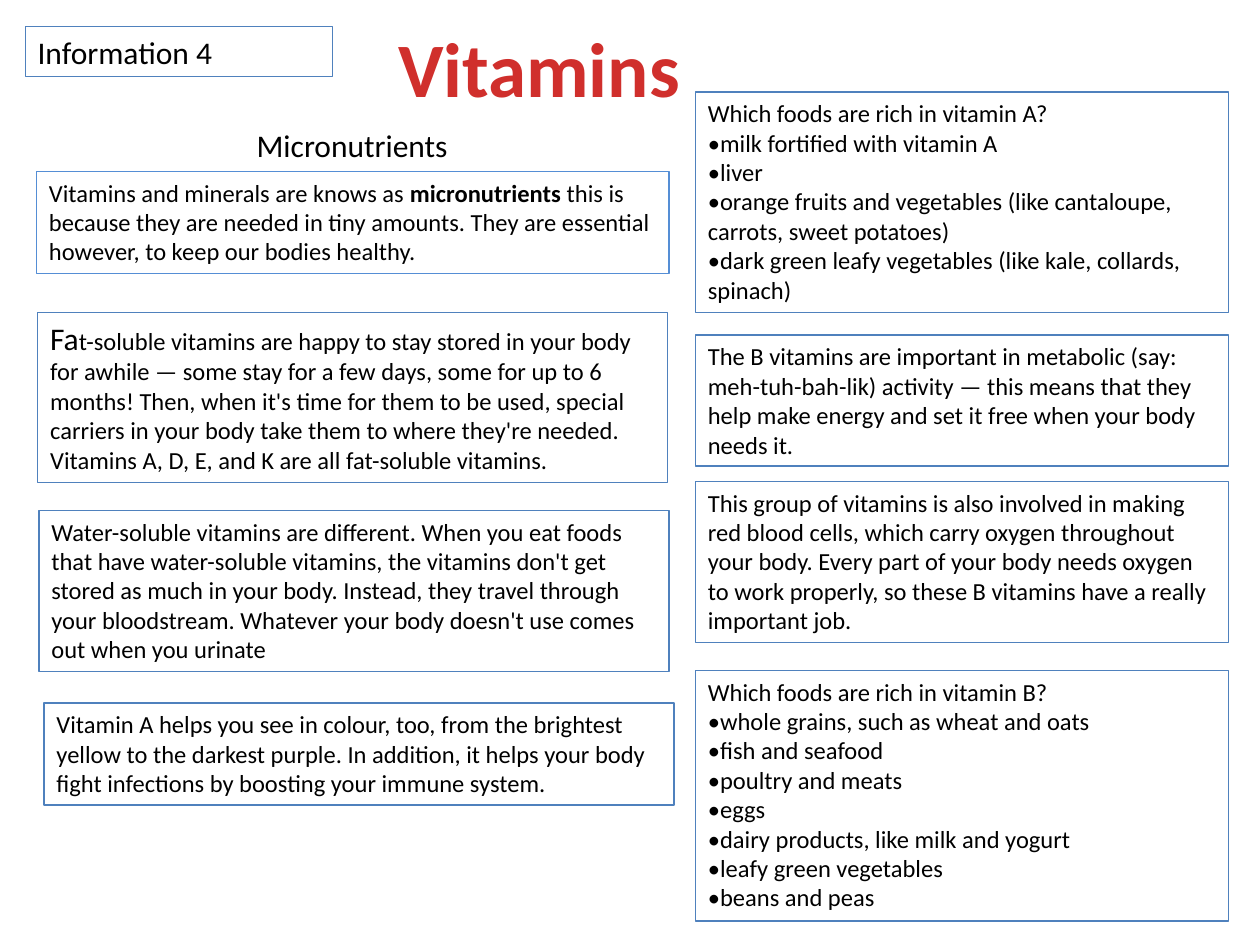
from dataclasses import dataclass

from pptx import Presentation
from pptx.dml.color import RGBColor
from pptx.enum.shapes import MSO_SHAPE
from pptx.enum.text import MSO_ANCHOR, MSO_AUTO_SIZE, PP_ALIGN
from pptx.util import Inches, Pt


@dataclass(frozen=True)
class Theme:
    font: str = "Calibri"
    text: RGBColor = RGBColor(0x00, 0x00, 0x00)
    title: RGBColor = RGBColor(0xD0, 0x2F, 0x2C)
    border: RGBColor = RGBColor(0x4F, 0x81, 0xBD)
    light_border: RGBColor = RGBColor(0x55, 0x8E, 0xD5)
    title_size: int = 44
    heading_size: int = 18
    body_size: int = 14
    border_width: float = 0.75


theme = Theme()


def write_text(box, paragraphs, size=theme.body_size, color=theme.text,
               bold=False, align=PP_ALIGN.LEFT, wrap=True):
    """Fill a box; a paragraph is a string or a list of (text, overrides)."""
    frame = box.text_frame
    frame.word_wrap = wrap
    frame.auto_size = MSO_AUTO_SIZE.SHAPE_TO_FIT_TEXT
    frame.vertical_anchor = MSO_ANCHOR.TOP
    for index, content in enumerate(paragraphs):
        para = frame.add_paragraph() if index else frame.paragraphs[0]
        para.alignment = align
        spans = [(content, {})] if isinstance(content, str) else content
        for text, overrides in spans:
            span = para.add_run()
            span.text = text
            span.font.name = theme.font
            span.font.size = Pt(overrides.get("size", size))
            span.font.bold = overrides.get("bold", bold)
            span.font.color.rgb = color


def add_panel(left, top, width, height, paragraphs, border=theme.border, **text_format):
    """Add an unfilled, outlined rectangle with text."""
    box = page.shapes.add_shape(MSO_SHAPE.RECTANGLE, Inches(left), Inches(top),
                                Inches(width), Inches(height))
    box.shadow.inherit = False
    box.fill.background()
    box.line.color.rgb = border
    box.line.width = Pt(theme.border_width)
    write_text(box, paragraphs, **text_format)


deck = Presentation()
deck.slide_width, deck.slide_height = Inches(10), Inches(7.5)
page = deck.slides.add_slide(deck.slide_layouts[5])

title = page.shapes.title
title.left, title.top = Inches(3.05), Inches(0.11)
title.width, title.height = Inches(2.46), Inches(0.84)
write_text(title, ["Vitamins"], size=theme.title_size, color=theme.title,
           bold=True, align=PP_ALIGN.CENTER, wrap=False)

add_panel(0.2, 0.21, 2.44, 0.4, ["Information 4"], size=theme.heading_size)

subtitle = page.shapes.add_textbox(Inches(0.59), Inches(0.95), Inches(4.41), Inches(0.4))
write_text(subtitle, ["Micronutrients"], size=theme.heading_size, align=PP_ALIGN.CENTER)

# Left column: what vitamins are
add_panel(0.29, 1.36, 5.02, 0.81, [[
    ("Vitamins and minerals are knows as ", {}),
    ("micronutrients", {"bold": True}),
    (" this is because they are needed in tiny amounts. They are essential however, "
     "to keep our bodies healthy.", {}),
]], border=theme.light_border)

left_panels = [
    (0.3, 2.48, 1.35, [
        ("Fa", {"size": theme.heading_size}),
        ("t-soluble vitamins are happy to stay stored in your body for awhile — some stay "
         "for a few days, some for up to 6 months! Then, when it's time for them to be used, "
         "special carriers in your body take them to where they're needed. "
         "Vitamins A, D, E, and K are all fat-soluble vitamins.", {}),
    ]),
    (0.31, 4.05, 1.28,
     "Water-soluble vitamins are different. When you eat foods that have water-soluble "
     "vitamins, the vitamins don't get stored as much in your body. Instead, they travel "
     "through your bloodstream. Whatever your body doesn't use comes out when you urinate"),
    (0.35, 5.58, 0.81,
     "Vitamin A helps you see in colour, too, from the brightest yellow to the darkest "
     "purple. In addition, it helps your body fight infections by boosting your immune "
     "system."),
]
for left, top, height, paragraph in left_panels:
    add_panel(left, top, 5, height, [paragraph])

# Right column: food sources and the B vitamins
right_panels = [
    (0.73, 1.75, [
        "Which foods are rich in vitamin A?",
        "•milk fortified with vitamin A",
        "•liver",
        "•orange fruits and vegetables (like cantaloupe, carrots, sweet potatoes)",
        "•dark green leafy vegetables (like kale, collards, spinach)",
    ]),
    (2.66, 1.04, [
        "The B vitamins are important in metabolic (say: meh-tuh-bah-lik) activity — this "
        "means that they help make energy and set it free when your body needs it.",
    ]),
    (3.82, 1.28, [
        "This group of vitamins is also involved in making red blood cells, which carry "
        "oxygen throughout your body. Every part of your body needs oxygen to work "
        "properly, so these B vitamins have a really important job.",
    ]),
    (5.32, 1.99, [
        "Which foods are rich in vitamin B?",
        "•whole grains, such as wheat and oats",
        "•fish and seafood",
        "•poultry and meats",
        "•eggs",
        "•dairy products, like milk and yogurt",
        "•leafy green vegetables",
        "•beans and peas",
    ]),
]
for top, height, paragraphs in right_panels:
    add_panel(5.52, top, 4.23, height, paragraphs)

deck.save("out.pptx")
